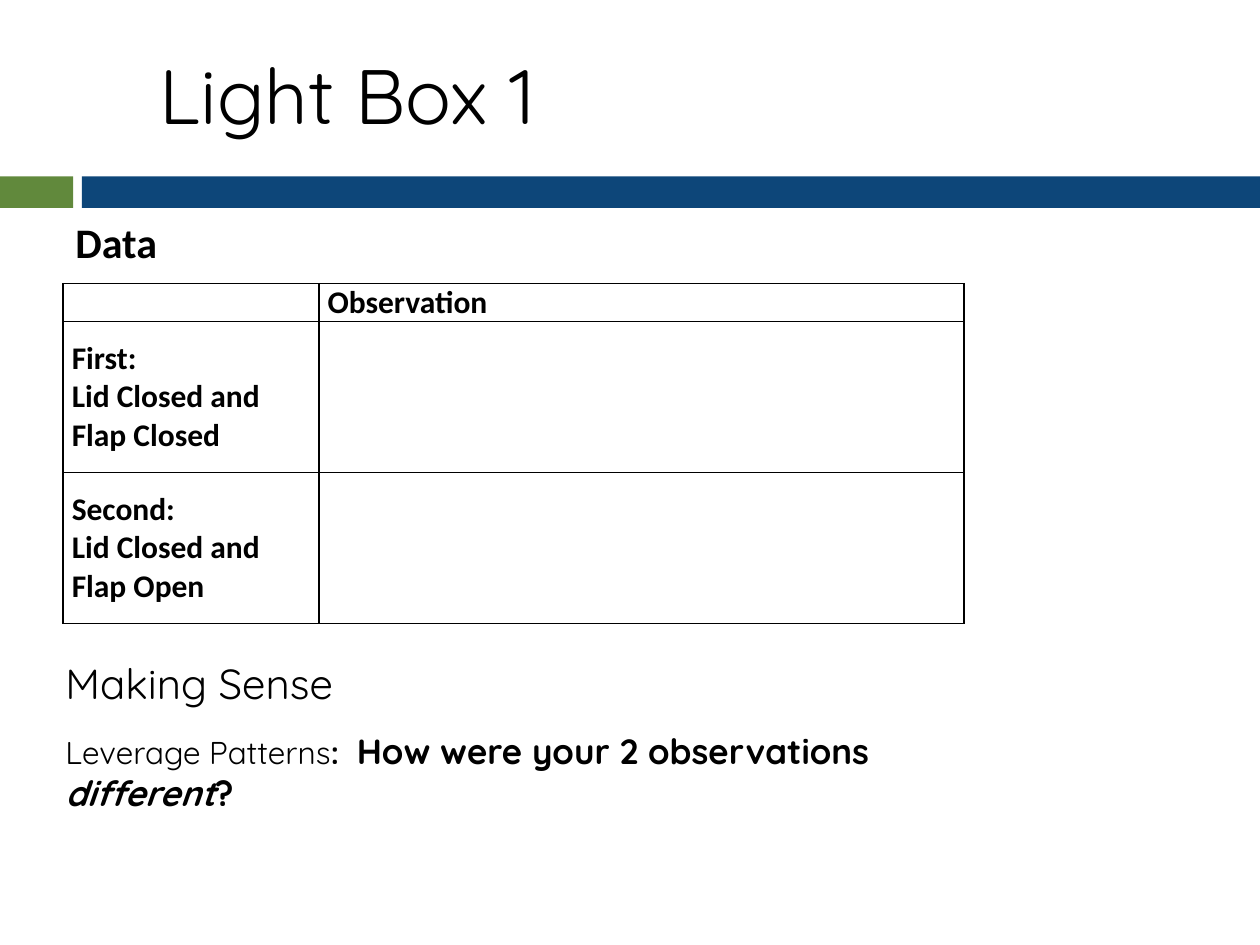
"""Build the Light Box 1 observation slide."""
import pptx
import pptx.util
import pptx.dml.color
import pptx.enum.shapes
import pptx.enum.text
import pptx.oxml
import pptx.oxml.ns

Inches = pptx.util.Inches
Pt = pptx.util.Pt
RGBColor = pptx.dml.color.RGBColor
MIDDLE = pptx.enum.text.MSO_ANCHOR.MIDDLE
TOP = pptx.enum.text.MSO_ANCHOR.TOP

GREEN = RGBColor(0x61, 0x89, 0x3C)
BLUE = RGBColor(0x0D, 0x46, 0x79)
BLACK = RGBColor(0, 0, 0)


def write(para, text, **form):
    run = para.add_run()
    run.text = text
    run.font.color.rgb = BLACK
    for key, value in form.items():
        setattr(run.font, key, value)


def box(left, top, width, height, anchor=TOP):
    shape = slide.shapes.add_textbox(
        Inches(left), Inches(top), Inches(width), Inches(height))
    frame = shape.text_frame
    frame.word_wrap = True
    frame.vertical_anchor = anchor
    return frame


deck = pptx.Presentation()
deck.slide_width = Inches(10)
deck.slide_height = Inches(7.5)
slide = deck.slides.add_slide(deck.slide_layouts[6])

for left, width, color in [(0, 0.58, GREEN), (0.65, 9.35, BLUE)]:
    bar = slide.shapes.add_shape(
        pptx.enum.shapes.MSO_SHAPE.RECTANGLE,
        Inches(left), Inches(1.4), Inches(width), Inches(0.25))
    bar.shadow.inherit = False
    bar.fill.solid()
    bar.fill.fore_color.rgb = color
    bar.line.fill.background()

title = box(1.17, 0.25, 8.42, 1.08, MIDDLE).paragraphs[0]
title.line_spacing = 0.9
write(title, "Light Box 1", name="Quicksand", size=Pt(44))

cells = [
    [[], ["Observation"]],
    [["First:", "Lid Closed and Flap Closed"], []],
    [["Second:", "Lid Closed and Flap Open"], []],
]
bold = {"name": "Calibri", "size": Pt(18), "bold": True}
table = slide.shapes.add_table(
    3, 2, Inches(0.5), Inches(2.25), Inches(7.15), Inches(2.7)).table
table.first_row = False
table.horz_banding = False
for col, width in zip(table.columns, [2.03, 5.12]):
    col.width = Inches(width)
for row, height in zip(table.rows, [0.3, 1.2, 1.2]):
    row.height = Inches(height)

for i, texts in enumerate(cells):
    for j, lines in enumerate(texts):
        cell = table.cell(i, j)
        margins = {"margin_left": 0.07, "margin_right": 0.07,
                   "margin_top": 0, "margin_bottom": 0}
        for key, value in margins.items():
            setattr(cell, key, Inches(value))
        cell.vertical_anchor = MIDDLE if i else TOP
        for side in "LRTB":
            cell._tc.get_or_add_tcPr().append(pptx.oxml.parse_xml(
                f'<a:ln{side} {pptx.oxml.ns.nsdecls("a")} w="12700">'
                f'<a:solidFill><a:srgbClr val="{BLACK}"/></a:solidFill>'
                f'</a:ln{side}>'))
        cell.fill.background()
        frame = cell.text_frame
        for n, line in enumerate(lines):
            para = frame.add_paragraph() if n else frame.paragraphs[0]
            write(para, line, **bold)

sense = box(0.42, 5.17, 7.61, 1.31)
write(sense.paragraphs[0], "Making Sense", name="Quicksand", size=Pt(24))
ask = sense.add_paragraph()
ask.space_before = Pt(12.5)
parts = [
    ("Leverage Patterns", 18, False, False),
    (":  ", 18, True, False),
    ("How were your 2 observations ", 20, True, False),
    ("different", 20, True, True),
    ("?", 20, True, False),
]
for text, size, heavy, slant in parts:
    write(ask, text, name="Quicksand", size=Pt(size), bold=heavy, italic=slant)

data = box(0.5, 1.67, 0.86, 0.51)
data.word_wrap = False
write(data.paragraphs[0], "Data", name="Calibri", size=Pt(24), bold=True)

deck.save("out.pptx")
